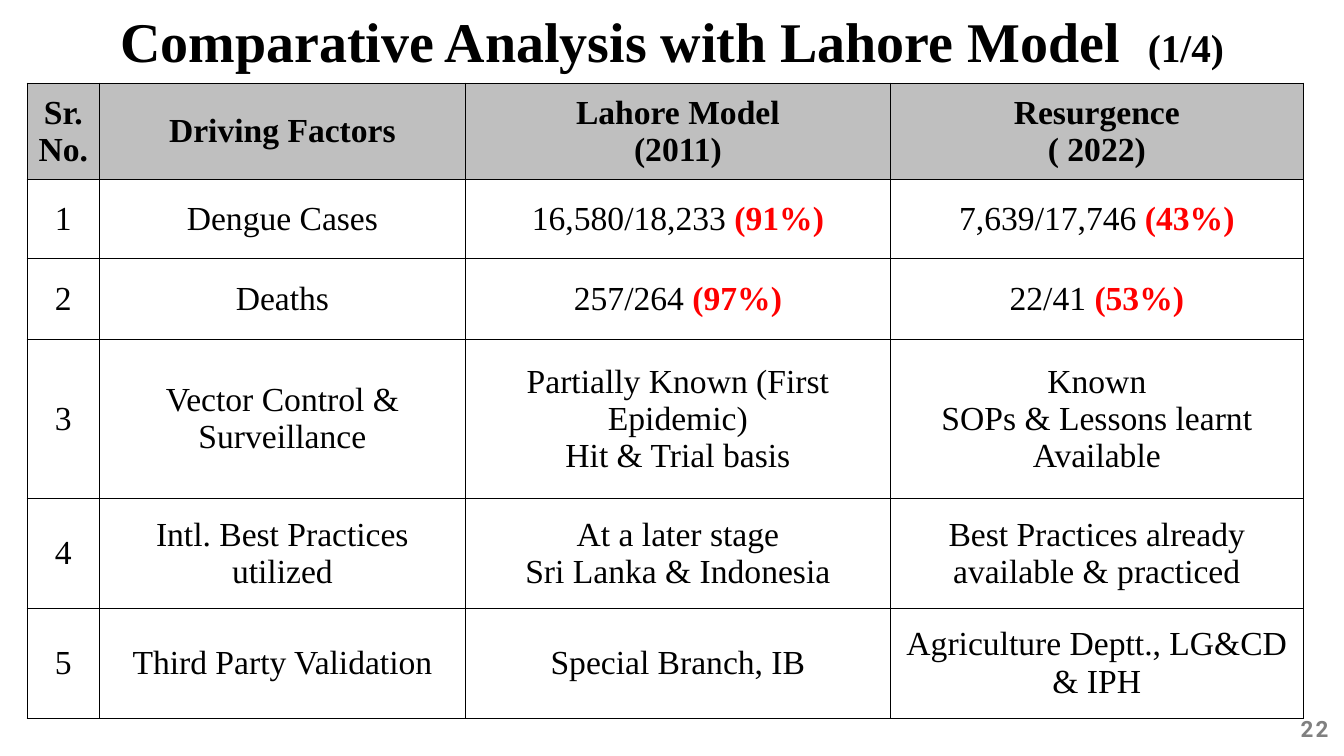
"""Build the slide comparing the Lahore Model with the resurgence."""
from lxml import etree
from pptx import Presentation
from pptx.dml.color import RGBColor
from pptx.enum.text import MSO_ANCHOR, PP_ALIGN
from pptx.oxml.ns import qn
from pptx.util import Pt

CENTER, RIGHT = PP_ALIGN.CENTER, PP_ALIGN.RIGHT
MIDDLE = MSO_ANCHOR.MIDDLE
SERIF = "Times New Roman"
BLACK, RED, GRAY, SILVER = "000000", "FF0000", "808080", "BFBFBF"


def paint(hue):
    return RGBColor.from_string(hue)


def style(run, size, bold, hue=BLACK, face=SERIF):
    run.font.name = face
    run.font.size = Pt(size)
    run.font.bold = bold
    run.font.color.rgb = paint(hue)


deck = Presentation()
deck.slide_width, deck.slide_height = Pt(960), Pt(540)
slide = deck.slides.add_slide(deck.slide_layouts[6])

box = slide.shapes.add_textbox(Pt(916.5), Pt(507), Pt(39.5), Pt(26.5))
box.text_frame.word_wrap = False
para = box.text_frame.paragraphs[0]
para.text = "22"
para.alignment = RIGHT
style(para.runs[0], 16, True, GRAY, "Roboto")
para.runs[0].font._element.set("spc", "150")

rows = [
    ["Sr. No.", "Driving Factors", "Lahore Model\n(2011)", "Resurgence\n( 2022)"],
    ["1", "Dengue Cases", "16,580/18,233 |(91%)", "7,639/17,746 |(43%)"],
    ["2", "Deaths", "257/264 |(97%)", "22/41 |(53%)"],
    ["3", "Vector Control & Surveillance",
     "Partially Known (First Epidemic)\nHit & Trial basis",
     "Known\nSOPs & Lessons learnt Available"],
    ["4", "Intl. Best Practices utilized",
     "At a later stage\nSri Lanka & Indonesia",
     "Best Practices already available & practiced"],
    ["5", "Third Party Validation", "Special Branch, IB",
     "Agriculture Deptt., LG&CD & IPH"],
]
widths = [51.5, 261.5, 303.5, 295]
heights = [68.5, 56.5, 58, 113.5, 78.5, 78.5]
table = slide.shapes.add_table(
    len(rows), len(widths), Pt(19.5), Pt(59.5), Pt(sum(widths)), Pt(sum(heights))
).table
table.horz_banding = False
for col, width in zip(table.columns, widths):
    col.width = Pt(width)
for row, height in zip(table.rows, heights):
    row.height = Pt(height)

for r, texts in enumerate(rows):
    for c, text in enumerate(texts):
        cell = table.cell(r, c)
        cell.vertical_anchor = MIDDLE
        props = cell._tc.get_or_add_tcPr()
        for side in ("a:lnL", "a:lnR", "a:lnT", "a:lnB"):
            line = etree.SubElement(props, qn(side), w=str(Pt(1)))
            fill = etree.SubElement(line, qn("a:solidFill"))
            etree.SubElement(fill, qn("a:srgbClr"), val=BLACK)
        if r == 0:
            cell.fill.solid()
            cell.fill.fore_color.rgb = paint(SILVER)
        else:
            cell.fill.background()
        cell.text_frame.text = text
        for para in cell.text_frame.paragraphs:
            main, _, share = para.text.partition("|")
            para.text = main
            para.alignment = CENTER
            style(para.runs[0], 24, r == 0)
            if share:
                run = para.add_run()
                run.text = share
                style(run, 24, True, RED)

title = slide.shapes.add_textbox(0, Pt(5), Pt(960), Pt(54))
title.text_frame.word_wrap = True
title.text_frame.vertical_anchor = MIDDLE
para = title.text_frame.paragraphs[0]
para.text = "Comparative Analysis with Lahore Model  "
para.alignment = CENTER
para.line_spacing = 0.9
style(para.runs[0], 40, True)
part = para.add_run()
part.text = "(1/4)"
style(part, 28, True)

deck.save("out.pptx")
